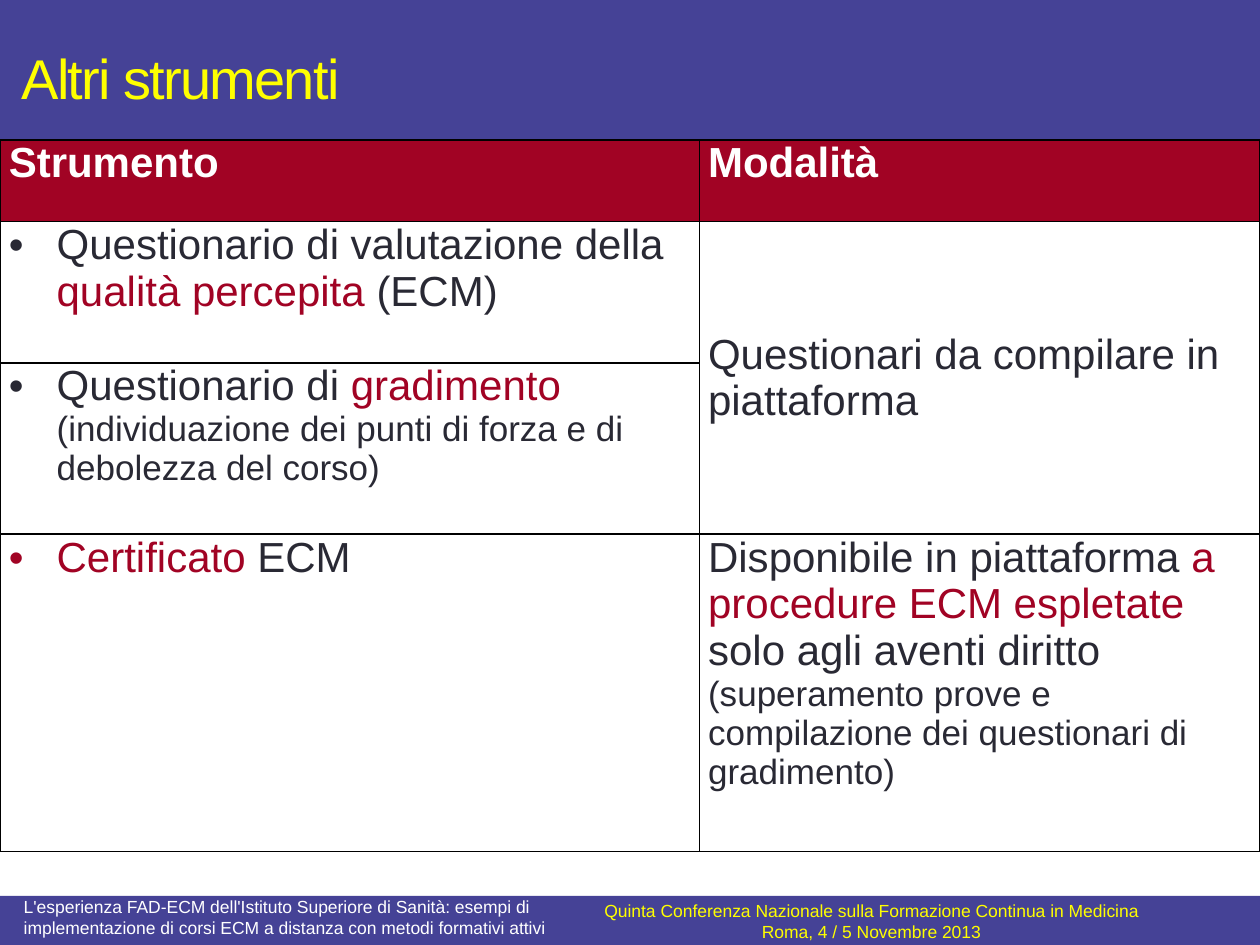
from lxml.etree import SubElement
from pptx import Presentation
from pptx.dml.color import RGBColor
from pptx.enum.shapes import MSO_SHAPE as Shape
from pptx.enum.text import MSO_ANCHOR as Anchor, PP_ALIGN as Align
from pptx.oxml.ns import qn
from pptx.util import Inches, Pt

COLORS = {"band": "454296", "header": "A10324", "accent": "A10324", "body": "292934",
          "white": "FFFFFF", "yellow": "FFFF00", "border": "000000"}
FONT = "Arial"
TITLE = "Altri strumenti"
HEADERS = ["Strumento", "Modalità"]
INSTRUMENTS = [
    [("Questionario di valutazione della ", 24, "body"), ("qualità percepita ", 24, "accent"),
     ("(ECM)", 24, "body")],
    [("Questionario di ", 24, "body"), ("gradimento ", 24, "accent"),
     ("(individuazione dei punti di forza e di debolezza del corso)", 20, "body")],
    [("Certificato", 24, "accent"), (" ECM", 24, "body")],
]
MODES = {
    1: [("Questionari da compilare in piattaforma", 24, "body")],
    3: [("Disponibile in piattaforma ", 24, "body"), ("a procedure ECM espletate ", 24, "accent"),
        ("solo agli aventi diritto ", 24, "body"),
        ("(superamento prove e compilazione dei questionari di gradimento)", 20, "body")],
}
CONFERENCE = ["Quinta Conferenza Nazionale sulla Formazione Continua in Medicina",
              "Roma, 4 / 5 Novembre 2013"]
TALK = ["L'esperienza FAD-ECM dell'Istituto Superiore di Sanità: esempi di "
        "implementazione di corsi ECM a distanza con metodi formativi attivi"]

BANDS = [(0, 7.11, 10.03, 0.4), (-0.01, 0, 10.03, 1.26)]
TITLE_BOX = (0.07, 0.07, 7.5, 1.08)
TABLE_CORNER = (0, 1.11)
COLUMN_WIDTHS = [5.55, 4.45]
ROW_HEIGHTS = [0.65, 1.12, 1.36, 2.52]
FOOTERS = [
    (CONFERENCE, (4.65, 7.13, 4.53, 0.36), "yellow", Align.CENTER,
     {"vertical_anchor": Anchor.MIDDLE}),
    (TALK, (0.09, 7.11, 4.46, 0.39), "white", Align.LEFT,
     {"margin_top": 0, "margin_bottom": Inches(0.05)}),
]
CELL_FORMAT = {"margin_left": Inches(0.07), "margin_right": Inches(0.07),
               "margin_top": 0, "margin_bottom": 0}


def rgb(color):
    return RGBColor.from_string(COLORS[color])


def apply(target, values):
    for name, value in values.items():
        setattr(target, name, value)


def write(paragraph, runs, bold=False):
    for text, size, color in runs:
        run = paragraph.add_run()
        run.text = text
        apply(run.font, {"name": FONT, "size": Pt(size), "bold": bold})
        run.font.color.rgb = rgb(color)


def add_bullet(paragraph):
    properties = paragraph._p.get_or_add_pPr()
    indent = Inches(0.38)
    properties.set("marL", str(indent))
    properties.set("indent", str(-indent))
    SubElement(properties, qn("a:buFont"), typeface=FONT)
    SubElement(properties, qn("a:buChar"), char="•")


def format_cell(cell, fill=None):
    apply(cell, CELL_FORMAT)
    properties = cell._tc.get_or_add_tcPr()
    for side in ("lnL", "lnR", "lnT", "lnB"):
        line = SubElement(properties, qn(f"a:{side}"), w=str(Pt(1)))
        solid = SubElement(line, qn("a:solidFill"))
        SubElement(solid, qn("a:srgbClr"), val=COLORS["border"])
    if fill:
        cell.fill.solid()
        cell.fill.fore_color.rgb = rgb(fill)
    else:
        cell.fill.background()


def add_bands(slide):
    for position, box in enumerate(BANDS, start=2):
        band = slide.shapes.add_shape(Shape.RECTANGLE, *map(Inches, box))
        band.shadow.inherit = False
        band.fill.solid()
        band.fill.fore_color.rgb = rgb("band")
        band.line.fill.background()
        slide.shapes._spTree.insert(position, band._element)


def add_title(slide):
    title = slide.shapes.title
    apply(title, dict(zip(("left", "top", "width", "height"), map(Inches, TITLE_BOX))))
    title.text_frame.vertical_anchor = Anchor.MIDDLE
    paragraph = title.text_frame.paragraphs[0]
    paragraph.alignment = Align.LEFT
    write(paragraph, [(TITLE, 32, "yellow")])
    paragraph.runs[0].font._element.set("spc", "-100")


def add_instruments(slide):
    size = (sum(COLUMN_WIDTHS), sum(ROW_HEIGHTS))
    table = slide.shapes.add_table(len(ROW_HEIGHTS), len(COLUMN_WIDTHS),
                                   *map(Inches, TABLE_CORNER + size)).table
    apply(table, {"first_row": False, "horz_banding": False})
    for column, width in zip(table.columns, COLUMN_WIDTHS):
        column.width = Inches(width)
    for index, (row, height) in enumerate(zip(table.rows, ROW_HEIGHTS)):
        row.height = Inches(height)
        for cell in row.cells:
            format_cell(cell, None if index else "header")
    for column, header in enumerate(HEADERS):
        write(table.cell(0, column).text_frame.paragraphs[0], [(header, 24, "white")], bold=True)
    for row, runs in enumerate(INSTRUMENTS, start=1):
        paragraph = table.cell(row, 0).text_frame.paragraphs[0]
        add_bullet(paragraph)
        write(paragraph, runs)
    table.cell(1, 1).merge(table.cell(2, 1))
    table.cell(1, 1).vertical_anchor = Anchor.MIDDLE
    for row, runs in MODES.items():
        write(table.cell(row, 1).text_frame.paragraphs[0], runs)


def add_footers(slide):
    for lines, box, color, alignment, frame_format in FOOTERS:
        frame = slide.shapes.add_textbox(*map(Inches, box)).text_frame
        apply(frame, {"word_wrap": True, **frame_format})
        for index, line in enumerate(lines):
            paragraph = frame.add_paragraph() if index else frame.paragraphs[0]
            paragraph.alignment = alignment
            write(paragraph, [(line, 10, color)])


def main():
    """Build the slide on further course instruments and save it."""
    deck = Presentation()
    apply(deck, {"slide_width": Inches(10), "slide_height": Inches(7.5)})
    slide = deck.slides.add_slide(deck.slide_layouts[5])
    add_bands(slide)
    add_title(slide)
    add_instruments(slide)
    add_footers(slide)
    deck.save("out.pptx")


if __name__ == "__main__":
    main()
